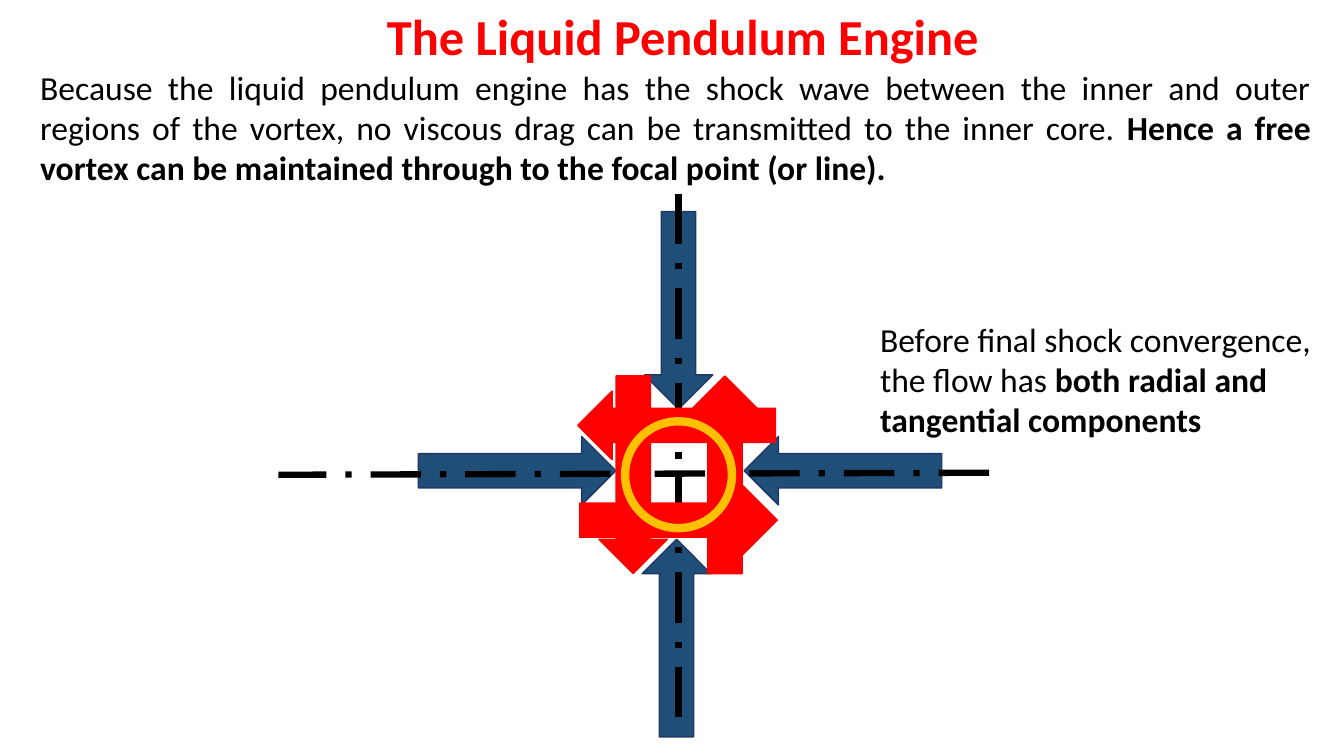
import pptx
import pptx.util
import pptx.dml.color
import pptx.enum.dml
import pptx.enum.shapes
import pptx.enum.text
import pptx.oxml
import dataclasses

PX = 9144
Align = pptx.enum.text.PP_ALIGN
Shape = pptx.enum.shapes.MSO_SHAPE


@dataclasses.dataclass(frozen=True)
class Theme:
    """Colours, type sizes and line widths of the slide."""
    font: str = "Calibri"
    title: int = 36
    body: int = 24
    ink: str = "000000"
    red: str = "FF0000"
    blue: str = "1F4E79"
    navy: str = "203864"
    gold: str = "FFC000"
    edge: float = 1
    axis: float = 4.5
    ring: float = 6


THEME = Theme()
TURN = {"down": 0, "left": 90, "up": 180, "right": 270}


def emu(*nums):
    """Turn px lengths into EMU."""
    return [pptx.util.Emu(num * PX) for num in nums]


def rgb(code):
    """Make a colour from its hex code."""
    return pptx.dml.color.RGBColor.from_string(code)


def stroke(line, code, width):
    """Set the colour and width of a line."""
    line.color.rgb = rgb(code)
    line.width = pptx.util.Pt(width)


def write(slide, box, runs, size, code=THEME.ink, align=Align.LEFT):
    """Place one paragraph made of (text, bold) runs in the box."""
    frame = slide.shapes.add_textbox(*emu(*box)).text_frame
    frame.word_wrap = True
    para = frame.paragraphs[0]
    para.alignment = align
    for text, bold in runs:
        run = para.add_run()
        run.text = text
        run.font.name = THEME.font
        run.font.size = pptx.util.Pt(size)
        run.font.bold = bold
        run.font.color.rgb = rgb(code)


def arrow(slide, mid, way, fill, edge):
    """Draw a block arrow centred on mid and pointing one way."""
    wide, tall = 68, 196
    box = emu(mid[0] - wide // 2, mid[1] - tall // 2, wide, tall)
    shape = slide.shapes.add_shape(Shape.DOWN_ARROW, *box)
    shape.rotation = TURN[way]
    shape.shadow.inherit = False
    shape.fill.solid()
    shape.fill.fore_color.rgb = rgb(fill)
    stroke(shape.line, edge, THEME.edge)


def axis(slide, start, end):
    """Draw a dash-dot centre line."""
    kind = pptx.enum.shapes.MSO_CONNECTOR.STRAIGHT
    line = slide.shapes.add_connector(kind, *emu(*start, *end))
    stroke(line.line, THEME.ink, THEME.axis)
    line.line.dash_style = pptx.enum.dml.MSO_LINE.LONG_DASH_DOT
    line._element.spPr.append(pptx.oxml.parse_xml(
        '<a:effectLst xmlns:a="http://schemas.openxmlformats.org/drawingml/2006/main"/>'))


def vortex(slide, box):
    """Draw the radial and swirling flow around the focal ring."""
    left, top, wide, tall = box
    x, y = left + 397, top + 278
    radial = {"left": (163, -3), "right": (-160, -3), "up": (-2, 163), "down": (0, -162)}
    swirl = {"down": (-45, 1), "up": (46, 1), "right": (0, 46), "left": (-2, -48)}
    for way, (dx, dy) in radial.items():
        arrow(slide, (x + dx, y + dy), way, THEME.blue, THEME.navy)
    axis(slide, (x, top), (x, top + tall))
    axis(slide, (left + wide, y - 1), (left, y + 1))
    for way, (dx, dy) in swirl.items():
        arrow(slide, (x + dx, y + dy), way, THEME.red, THEME.red)
    size = 106
    ring = slide.shapes.add_shape(
        Shape.OVAL, *emu(x - size // 2, y + 1 - size // 2, size, size))
    ring.shadow.inherit = False
    ring.fill.background()
    stroke(ring.line, THEME.gold, THEME.ring)


def header(slide, box):
    """Place the title above the justified introduction."""
    left, top, wide, tall = box
    write(slide, (left + 201, top, 893, 71), [("The Liquid Pendulum Engine", True)],
          THEME.title, THEME.red, Align.CENTER)
    intro = [
        ("Because the liquid pendulum engine has the shock wave between the inner and "
         "outer regions of the vortex, no viscous drag can be transmitted to the inner "
         "core. ", False),
        ("Hence a free vortex can be maintained through to the focal point (or line).", True),
    ]
    write(slide, (left, top + 61, wide, tall - 61), intro, THEME.body, align=Align.JUSTIFY)


def note(slide, box):
    """Place the remark beside the vortex."""
    runs = [("Before final shock convergence, the flow has ", False),
            ("both radial and tangential components", True)]
    write(slide, box, runs, THEME.body)


def main():
    """Build the slide and save it."""
    deck = pptx.Presentation()
    deck.slide_width, deck.slide_height = emu(1333, 750)
    slide = deck.slides.add_slide(deck.slide_layouts[6])
    vortex(slide, (276, 192, 705, 524))
    header(slide, (30, 0, 1280, 192))
    note(slide, (863, 311, 471, 131))
    deck.save("out.pptx")


if __name__ == "__main__":
    main()
